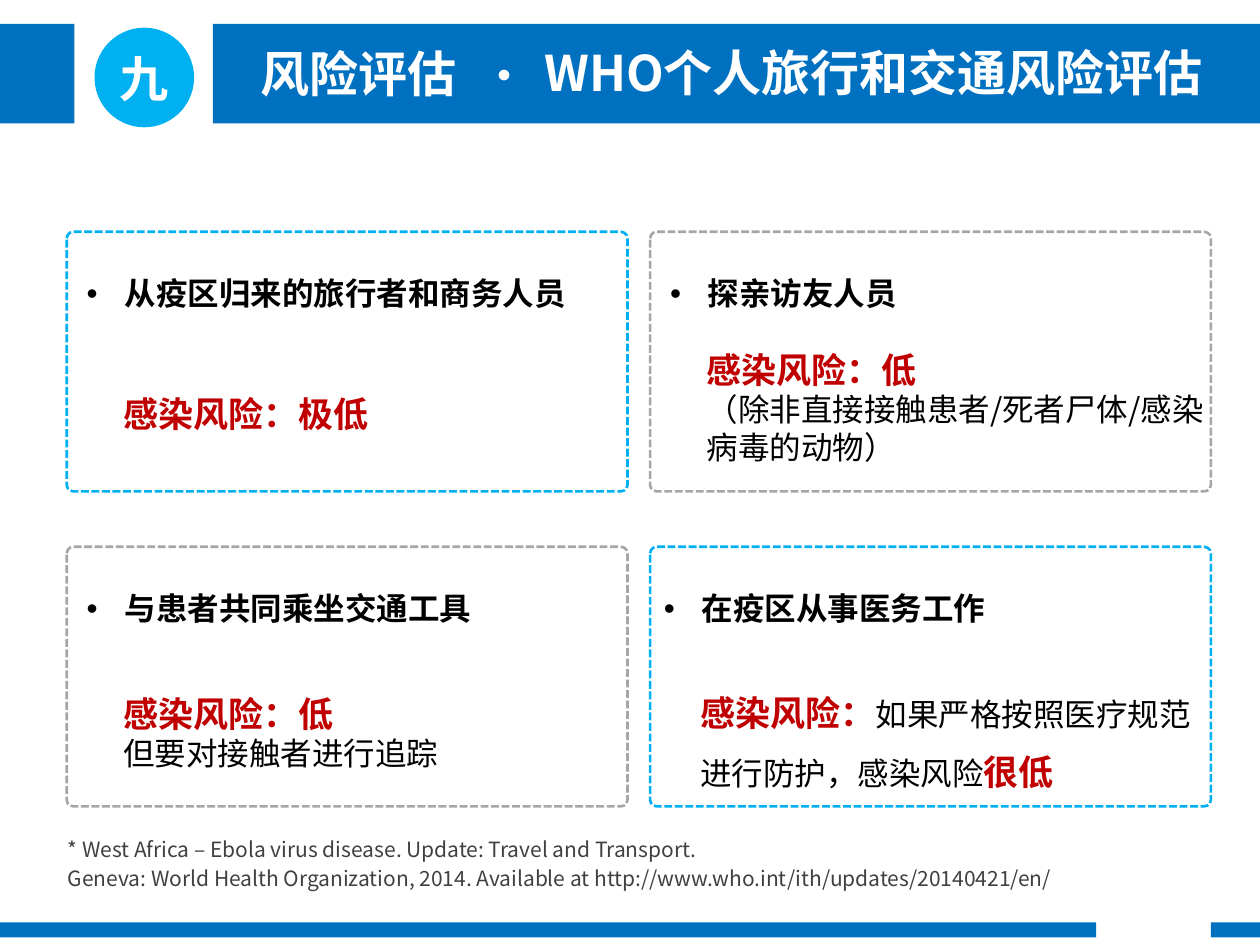
from lxml.etree import SubElement
from pptx import Presentation
from pptx.dml.color import RGBColor
from pptx.enum.dml import MSO_LINE
from pptx.enum.shapes import MSO_SHAPE as SHAPE
from pptx.enum.text import MSO_ANCHOR, MSO_AUTO_SIZE, PP_ALIGN
from pptx.oxml.ns import qn
from pptx.util import Inches, Pt

FONT = "Noto Sans CJK SC"
COLORS = {"bar": "0070C0", "accent": "00B0F0", "gray": "A6A6A6", "risk": "C00000",
          "text": "000000", "note": "404040", "white": "FFFFFF"}

# Text styles: size, colour, bold
TITLE = (28, "white", True)
DOT = (24, "white", True)
HEADING = (18, "text", True)
RISK = (20, "risk", True)
BODY = (18, "text", False)
NOTE = (12, "note", False)

PANEL_LEFTS = (0.53, 5.16)
PANEL_TOPS = (1.84, 4.34)
PANEL_WIDTH = 4.45
PANEL_HEIGHT = 2.06
RISK_WIDTH = 4.47


def color(name):
    return RGBColor.from_string(COLORS[name])


def style_font(font, style):
    size, color_name, bold = style
    font.size = Pt(size)
    font.bold = bold
    font.color.rgb = color(color_name)
    font.name = FONT
    SubElement(font._element, qn("a:ea"), typeface=FONT)


def write_runs(paragraph, runs):
    """Write (text, style) runs; one shared style goes on the paragraph."""
    styles = {style for _, style in runs}
    if len(styles) == 1:
        style_font(paragraph.font, styles.pop())
    for text, style in runs:
        run = paragraph.add_run()
        run.text = text
        if len(runs) > 1:
            style_font(run.font, style)


def set_indent(paragraph, margin, indent, bullet=None):
    properties = paragraph._p.get_or_add_pPr()
    properties.set("marL", str(Inches(margin)))
    properties.set("indent", str(Inches(indent)))
    if bullet:
        SubElement(properties, qn("a:buFont"), typeface="Arial")
        SubElement(properties, qn("a:buChar"), char=bullet)


def add_tab_stop(paragraph, position):
    tabs = SubElement(paragraph._p.get_or_add_pPr(), qn("a:tabLst"))
    SubElement(tabs, qn("a:tab"), pos=str(Inches(position)), algn="l")


def add_text_box(slide, left, top, width, height, wrap=True):
    box = slide.shapes.add_textbox(*map(Inches, (left, top, width, height)))
    frame = box.text_frame
    frame.word_wrap = wrap
    frame.auto_size = MSO_AUTO_SIZE.SHAPE_TO_FIT_TEXT
    return frame


def add_filled_shape(slide, kind, left, top, width, height, fill):
    shape = slide.shapes.add_shape(kind, *map(Inches, (left, top, width, height)))
    shape.shadow.inherit = False
    shape.fill.solid()
    shape.fill.fore_color.rgb = color(fill)
    shape.line.fill.background()
    return shape


def add_bars(slide):
    for left, top, width, height in ((0, 7.32, 8.7, 0.12), (9.61, 7.32, 0.39, 0.12),
                                     (0, 0.19, 0.59, 0.79), (1.69, 0.19, 8.31, 0.79)):
        add_filled_shape(slide, SHAPE.RECTANGLE, left, top, width, height, "bar")


def add_badge(slide, text):
    badge = add_filled_shape(slide, SHAPE.OVAL, 0.75, 0.22, 0.79, 0.79, "accent")
    frame = badge.text_frame
    frame.margin_left = frame.margin_right = frame.margin_top = frame.margin_bottom = 0
    frame.vertical_anchor = MSO_ANCHOR.MIDDLE
    paragraph = frame.paragraphs[0]
    paragraph.alignment = PP_ALIGN.CENTER
    write_runs(paragraph, [(text, TITLE)])


def add_heading_line(slide, section, title_text):
    frame = add_text_box(slide, 1.97, 0.3, 1.77, 0.57, wrap=False)
    write_runs(frame.paragraphs[0], [(section, TITLE)])

    title = slide.shapes.title
    title.left, title.top, title.width, title.height = map(Inches, (3.74, 0.29, 6.19, 0.57))
    slide.shapes._spTree.append(title._element)  # in front of the bar
    frame = title.text_frame
    frame.word_wrap = True
    frame.auto_size = MSO_AUTO_SIZE.SHAPE_TO_FIT_TEXT
    frame.vertical_anchor = MSO_ANCHOR.TOP
    paragraph = frame.paragraphs[0]
    paragraph.alignment = PP_ALIGN.LEFT
    add_tab_stop(paragraph, 0.48)
    write_runs(paragraph, [("·\t", DOT), (title_text, TITLE)])


def add_panel(slide, column, row):
    panel = add_filled_shape(slide, SHAPE.ROUNDED_RECTANGLE, PANEL_LEFTS[column],
                             PANEL_TOPS[row], PANEL_WIDTH, PANEL_HEIGHT, "white")
    panel.fill.background()
    panel.adjustments[0] = 0.025
    panel.line.color.rgb = color("accent" if column == row else "gray")
    panel.line.width = Pt(1.5)
    panel.line.dash_style = MSO_LINE.SQUARE_DOT


def add_panel_heading(slide, left, row, text):
    frame = add_text_box(slide, left, PANEL_TOPS[row] + 0.17, RISK_WIDTH, 0.53)
    paragraph = frame.paragraphs[0]
    paragraph.line_spacing = 1.4
    paragraph.space_after = Pt(6)
    set_indent(paragraph, 0.3, -0.3, "•")
    write_runs(paragraph, [(text, HEADING)])


def add_risk(slide, left, top, height, runs, remark=None):
    frame = add_text_box(slide, left, top, RISK_WIDTH, height)
    paragraph = frame.paragraphs[0]
    paragraph.line_spacing = 1.4
    set_indent(paragraph, 0.29, 0)
    write_runs(paragraph, runs)
    if remark:
        paragraph = frame.add_paragraph()
        set_indent(paragraph, 0.29, 0)
        write_runs(paragraph, [(remark, BODY)])


def add_source_note(slide, lines):
    frame = add_text_box(slide, 0.44, 6.59, 9.06, 0.55)
    for index, line in enumerate(lines):
        paragraph = frame.add_paragraph() if index else frame.paragraphs[0]
        if index:
            paragraph.space_before = Pt(2.4)
        write_runs(paragraph, [(line, NOTE)])


def main():
    presentation = Presentation()
    presentation.slide_width, presentation.slide_height = Inches(10), Inches(7.5)
    slide = presentation.slides.add_slide(presentation.slide_layouts[5])

    add_bars(slide)
    add_badge(slide, "九")
    add_heading_line(slide, "风险评估", "WHO个人旅行和交通风险评估")

    # column, row, text left, heading, risk top, risk height, risk runs, remark
    panels = (
        (0, 0, 0.59, "从疫区归来的旅行者和商务人员", 2.93, 0.57,
         [("感染风险：极低", RISK)], None),
        (1, 0, 5.22, "探亲访友人员", 2.58, 1.18,
         [("感染风险：低", RISK)], "（除非直接接触患者/死者尸体/感染病毒的动物）"),
        (0, 1, 0.59, "与患者共同乘坐交通工具", 5.31, 0.88,
         [("感染风险：低", RISK)], "但要对接触者进行追踪"),
        (1, 1, 5.17, "在疫区从事医务工作", 5.31, 1.04,
         [("感染风险：", RISK), ("如果严格按照医疗规范进行防护，感染风险", BODY),
          ("很低", RISK)], None),
    )
    for column, row, left, heading, risk_top, risk_height, runs, remark in panels:
        add_panel(slide, column, row)
        add_panel_heading(slide, left, row, heading)
        add_risk(slide, left, risk_top, risk_height, runs, remark)

    add_source_note(slide, (
        "* West Africa – Ebola virus disease. Update: Travel and Transport.",
        "Geneva: World Health Organization, 2014. Available at "
        "http://www.who.int/ith/updates/20140421/en/",
    ))
    presentation.save("out.pptx")


if __name__ == "__main__":
    main()
